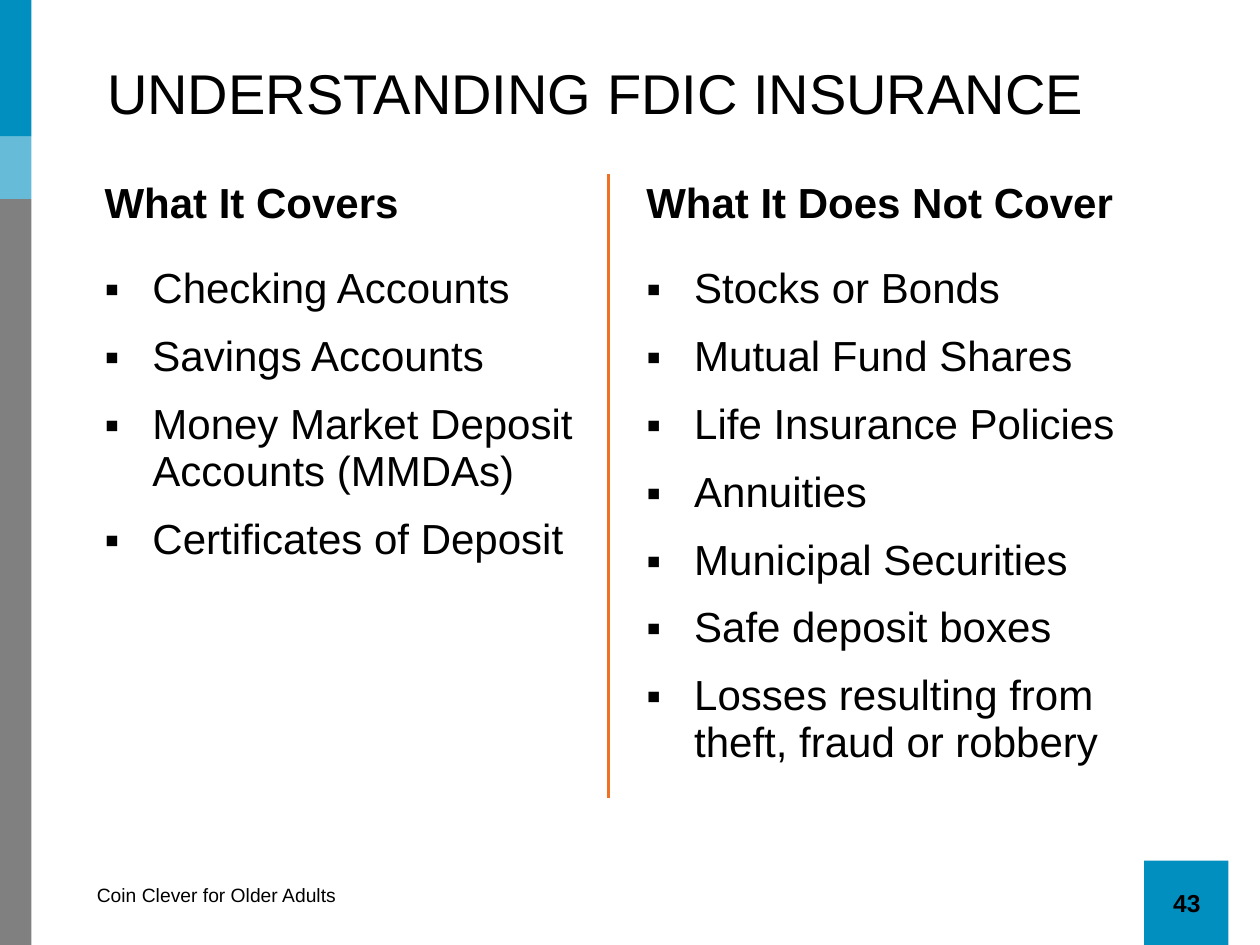
from lxml.etree import SubElement
from pptx import Presentation
from pptx.dml.color import RGBColor
from pptx.enum.shapes import MSO_SHAPE
from pptx.enum.text import MSO_ANCHOR, PP_ALIGN
from pptx.oxml import parse_xml
from pptx.oxml.ns import nsdecls, qn
from pptx.util import Inches, Pt

BLUE = RGBColor(0x00, 0x8F, 0xBE)
GRAY = RGBColor(0x80, 0x80, 0x80)
BLACK = RGBColor(0x00, 0x00, 0x00)
ORANGE = RGBColor(0xEF, 0x71, 0x22)
PLAIN = "{2D5ABB26-0587-4C30-8999-92F81FD0307C}"

COVERED = [
    "Checking Accounts",
    "Savings Accounts",
    "Money Market Deposit Accounts (MMDAs)",
    "Certificates of Deposit",
]
EXCLUDED = [
    "Stocks or Bonds",
    "Mutual Fund Shares",
    "Life Insurance Policies",
    "Annuities",
    "Municipal Securities",
    "Safe deposit boxes",
    "Losses resulting from theft, fraud or robbery",
]


class Page:
    face = "Arial"

    def __init__(self, deck):
        self.slide = deck.slides.add_slide(deck.slide_layouts[5])
        self.shapes = self.slide.shapes

    def style(self, para, size, bold=False, align=PP_ALIGN.LEFT):
        para.alignment = align
        font = para.font
        font.name = self.face
        font.size = Pt(size)
        font.bold = bold
        font.color.rgb = BLACK

    def title(self, text, box):
        shape = self.shapes.title
        shape.left, shape.top, shape.width, shape.height = map(Inches, box)
        shape.text_frame.text = text
        shape.text_frame.vertical_anchor = MSO_ANCHOR.MIDDLE
        self.style(shape.text_frame.paragraphs[0], 32)

    def block(self, box, color, alpha=None):
        shape = self.shapes.add_shape(MSO_SHAPE.RECTANGLE, *map(Inches, box))
        shape.shadow.inherit = False
        shape.fill.solid()
        shape.fill.fore_color.rgb = color
        shape.line.fill.background()
        if alpha:
            tint = shape.fill._xPr.find(".//" + qn("a:srgbClr"))
            SubElement(tint, qn("a:alpha"), val=str(alpha * 1000))

    def label(self, text, box, size, **look):
        frame = self.shapes.add_textbox(*map(Inches, box)).text_frame
        frame.word_wrap = True
        frame.text = text
        self.style(frame.paragraphs[0], size, **look)

    def bullet(self, para):
        para.space_after = Pt(12)
        props = para._p.get_or_add_pPr()
        props.set("marL", str(Inches(0.38)))
        props.set("indent", str(-Inches(0.38)))
        SubElement(props, qn("a:buFont"), typeface=self.face)
        SubElement(props, qn("a:buChar"), char="▪")

    def border(self, cell, side):
        line = parse_xml(
            f'<a:{side} {nsdecls("a")} w="{Pt(2.25)}"><a:solidFill>'
            f'<a:srgbClr val="{ORANGE}"/></a:solidFill></a:{side}>'
        )
        cell._tc.get_or_add_tcPr().insert(0, line)

    def cell(self, cell, lines, pads, side, head):
        cell.fill.background()
        (cell.margin_left, cell.margin_top,
         cell.margin_right, cell.margin_bottom) = map(Inches, pads)
        cell.text_frame.text = "\n".join(lines)
        for para in cell.text_frame.paragraphs:
            if not head:
                self.bullet(para)
            self.style(para, 24, bold=head)
        self.border(cell, side)

    def table(self, box, heads, lists, widths, heights):
        grid = self.shapes.add_table(2, 2, *map(Inches, box)).table
        grid.first_row = grid.horz_banding = False
        grid._tbl.tblPr.find(qn("a:tableStyleId")).text = PLAIN
        for row, high in zip(grid.rows, heights):
            row.height = Inches(high)
        for col, wide in enumerate(widths):
            grid.columns[col].width = Inches(wide)
            side = ("lnR", "lnL")[col]
            left = ((0, 0.05, 0.1, 0.05), (0, 0.05, 0.2, 0.05))
            right = ((0.3, 0.05, 0, 0.23), (0.3, 0.05, 0, 0.02))
            pads = (left, right)[col]
            self.cell(grid.cell(0, col), [heads[col]], pads[0], side, True)
            self.cell(grid.cell(1, col), lists[col], pads[1], side, False)


def main():
    deck = Presentation()
    deck.slide_width, deck.slide_height = Inches(10), Inches(7.5)
    page = Page(deck)
    page.block((9.08, 6.83, 0.67, 0.67), BLUE)
    page.label("Coin Clever for Older Adults", (0.67, 6.96, 2.42, 0.29), 11)
    page.label("43", (9.17, 7, 0.5, 0.34), 14, bold=True, align=PP_ALIGN.CENTER)
    page.block((0, 1.58, 0.25, 5.92), GRAY)
    page.block((0, 1.08, 0.25, 0.5), BLUE, alpha=60)
    page.block((0, 0, 0.25, 1.08), BLUE)
    page.title("UNDERSTANDING FDIC INSURANCE", (0.75, 0.4, 8.5, 0.67))
    page.table(
        (0.83, 1.38, 8.58, 4.13),
        ["What It Covers", "What It Does Not Cover"],
        [COVERED, EXCLUDED],
        widths=(4, 4.58),
        heights=(0.63, 3.5),
    )
    deck.save("out.pptx")


if __name__ == "__main__":
    main()
